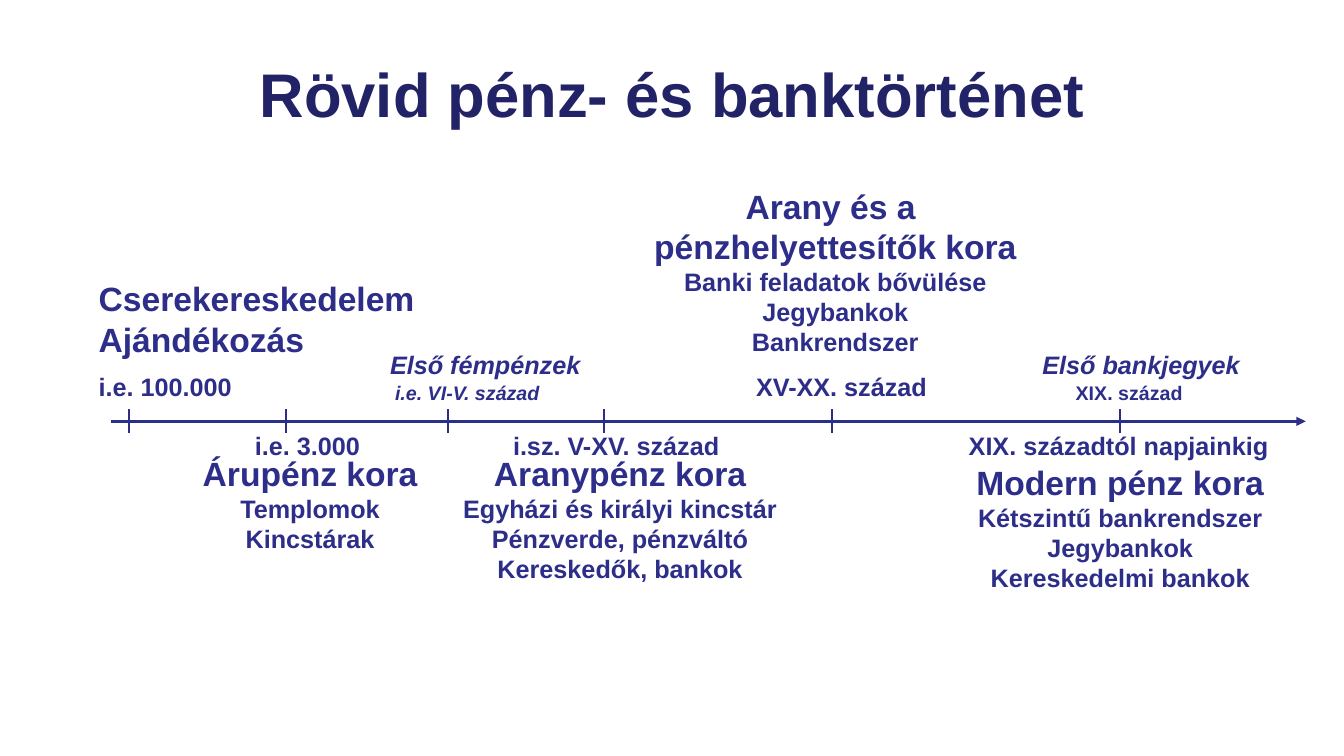
from dataclasses import dataclass

from lxml import etree
from pptx import Presentation
from pptx.dml.color import RGBColor
from pptx.enum.shapes import MSO_CONNECTOR as CONN
from pptx.enum.text import MSO_ANCHOR as ANCHOR, MSO_AUTO_SIZE as FIT, PP_ALIGN as ALIGN
from pptx.oxml.ns import qn
from pptx.util import Inches, Pt

FONT, TITLE_COLOR, BLUE = "Arial", "222267", "2D2D8A"
AXIS_Y, TICK_HALF = 4.18, 0.12
BIG, MID, SMALL = 24, 18, 14


@dataclass(frozen=True)
class Label:
    left: float
    top: float
    width: float
    height: float
    lines: tuple[str, ...]
    size: int = MID  # first line; era details follow in MID
    italic: bool = False


@dataclass(frozen=True)
class Era(Label):
    """Centred heading lines followed by smaller details."""
    size: int = BIG
    headings: int = 1


@dataclass(frozen=True)
class Milestone:
    x: float
    labels: tuple[Label, ...]


MILESTONES = (
    Milestone(1.28, (
        Label(0.88, 3.63, 1.53, 0.4, ("i.e. 100.000",)),
        Label(0.88, 2.71, 3.37, 0.91, ("Cserekereskedelem", "Ajándékozás"), BIG))),
    Milestone(2.84, (
        Label(2.43, 4.22, 1.25, 0.4, ("i.e. 3.000",)),
        Era(1.9, 4.44, 2.35, 1.11, ("Árupénz kora", "Templomok", "Kincstárak")))),
    Milestone(5.99, (
        Label(4.99, 4.22, 2.27, 0.4, ("i.sz. V-XV. század",)),
        Era(4.48, 4.44, 3.34, 1.41, ("Aranypénz kora", "Egyházi és királyi kincstár",
                                     "Pénzverde, pénzváltó", "Kereskedők, bankok")))),
    Milestone(4.44, (
        Label(3.82, 3.73, 1.64, 0.34, ("i.e. VI-V. század",), SMALL, True),
        Label(3.77, 3.42, 2.11, 0.4, ("Első fémpénzek",), italic=True))),
    Milestone(8.25, (
        Label(7.4, 3.63, 1.91, 0.4, ("XV-XX. század",)),
        Era(6.37, 1.79, 3.83, 1.82, ("Arany és a ", "pénzhelyettesítők kora",
                                     "Banki feladatok bővülése", "Jegybankok",
                                     "Bankrendszer"), headings=2))),
    Milestone(11.11, (
        Label(10.57, 3.73, 1.27, 0.34, ("XIX. század",), SMALL),
        Label(10.24, 3.42, 2.18, 0.4, ("Első bankjegyek",), italic=True),
        Label(9.51, 4.22, 3.2, 0.4, ("XIX. századtól napjainkig",)),
        Era(9.57, 4.53, 3.08, 1.41, ("Modern pénz kora", "Kétszintű bankrendszer",
                                     "Jegybankok", "Kereskedelmi bankok")))),
)


def rgb(color: str) -> RGBColor:
    return RGBColor.from_string(color)


def add_text(p, text: str, *, size: float, color: str = BLUE,
             italic: bool = False, align=ALIGN.LEFT) -> None:
    p.alignment = align
    r = p.add_run()
    r.text = text
    r.font.name, r.font.size = FONT, Pt(size)
    r.font.bold, r.font.italic = True, italic
    r.font.color.rgb = rgb(color)


def add_line(shapes, x1: float, y1: float, x2: float, y2: float, width: float):
    ln = shapes.add_connector(CONN.STRAIGHT, *map(Inches, (x1, y1, x2, y2)))
    ln.line.color.rgb = rgb(BLUE)
    ln.line.width = Pt(width)
    etree.SubElement(ln._element.spPr, qn("a:effectLst"))
    return ln


def add_label(shapes, label: Label) -> None:
    sp = shapes.add_textbox(*map(Inches, (label.left, label.top, label.width, label.height)))
    tf = sp.text_frame
    tf.word_wrap, tf.auto_size = False, FIT.SHAPE_TO_FIT_TEXT
    is_era = isinstance(label, Era)
    for i, line in enumerate(label.lines):
        p = tf.add_paragraph() if i else tf.paragraphs[0]
        add_text(p, line, size=MID if is_era and i >= label.headings else label.size,
                 italic=label.italic, align=ALIGN.CENTER if is_era else ALIGN.LEFT)


def main() -> None:
    prs = Presentation()
    prs.slide_width, prs.slide_height = Inches(13.33), Inches(7.5)
    s = prs.slides.add_slide(prs.slide_layouts[6])

    # Title
    tf = s.shapes.add_textbox(Inches(0.67), Inches(0.3), Inches(12), Inches(1.25)).text_frame
    tf.word_wrap, tf.vertical_anchor = True, ANCHOR.MIDDLE
    add_text(tf.paragraphs[0], "Rövid pénz- és banktörténet", size=44,
             color=TITLE_COLOR, align=ALIGN.CENTER)

    # Time axis with arrowhead
    axis = add_line(s.shapes, 1.1, AXIS_Y, 12.95, AXIS_Y, 2.25)
    etree.SubElement(axis.line._get_or_add_ln(), qn("a:tailEnd"), type="triangle")

    # Milestones: a tick and its labels, grouped
    for m in MILESTONES:
        group = s.shapes.add_group_shape()
        add_line(group.shapes, m.x, AXIS_Y - TICK_HALF, m.x, AXIS_Y + TICK_HALF, 1.5)
        for label in m.labels:
            add_label(group.shapes, label)

    prs.save("out.pptx")


if __name__ == "__main__":
    main()
